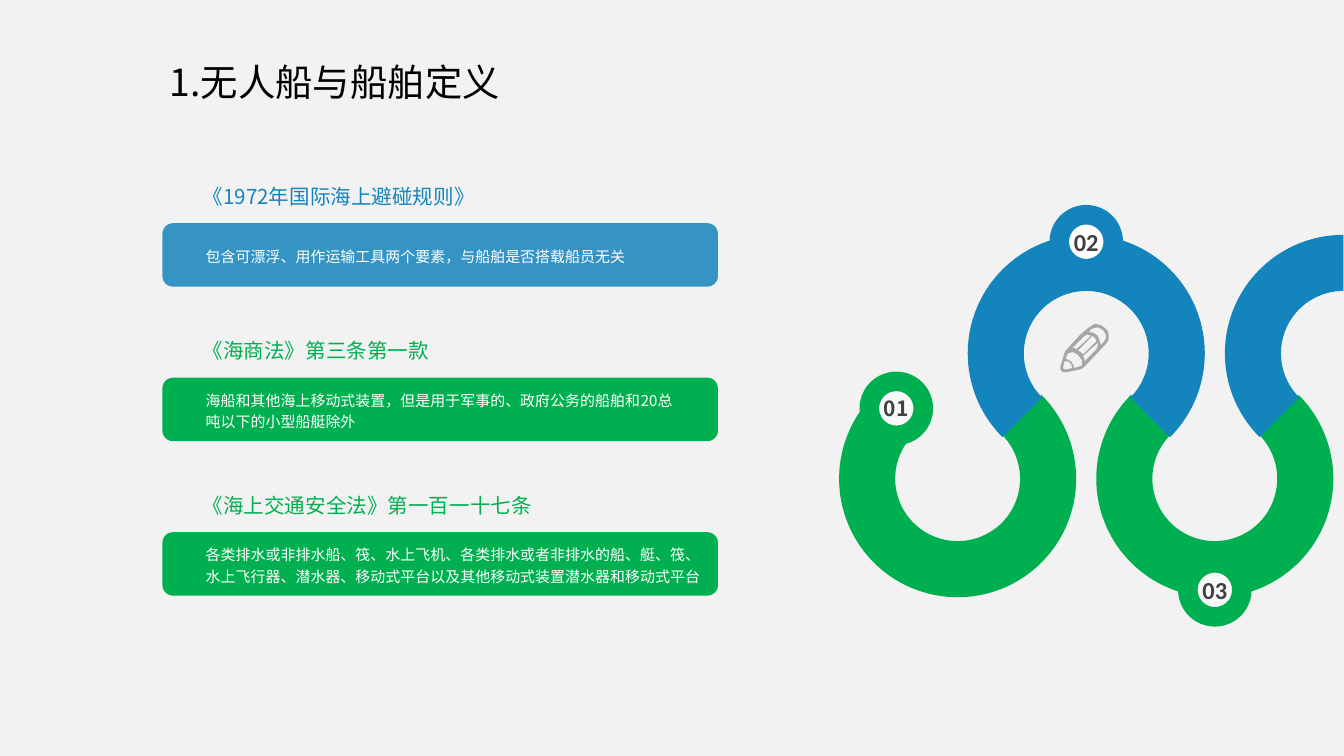
import math

import pptx
import pptx.dml.color
import pptx.enum.shapes
import pptx.enum.text
import pptx.oxml
import pptx.oxml.ns
import pptx.util
from pptx.util import Cm

SHAPES = pptx.enum.shapes.MSO_SHAPE
ANCHOR = pptx.enum.text.MSO_ANCHOR
ALIGN = pptx.enum.text.PP_ALIGN
AUTO_SIZE = pptx.enum.text.MSO_AUTO_SIZE

GREEN, BLUE = "00B050", "1484BC"
CHINESE_FONT = "Noto Sans CJK SC"

# Ring chain, in centimetres
OUTER_RADIUS, INNER_RADIUS = 2.24, 1.18
CHAIN_LEFT, CHAIN_STEP = 18.1, 2.43
GREEN_Y, BLUE_Y = 9.05, 6.68

# Pencil contours in hundredths of an inch: outline first, then the openings
PENCIL_UNIT = Cm(0.0254)
PENCIL_CONTOURS = [
    [(33, 3), (30, 1), (26, 0), (24, 1), (21, 3), (15, 8), (4, 20), (3, 22), (0, 32),
     (0, 34), (2, 36), (5, 36), (15, 34), (17, 33), (34, 15), (36, 12), (36, 8), (35, 5)],
    [(18, 27), (17, 24), (28, 14), (28, 16), (27, 19), (18, 28)],
    [(17, 23), (15, 21), (13, 20), (24, 9), (26, 11), (27, 13)],
    [(12, 19), (10, 18), (8, 19), (17, 10), (20, 8), (23, 9)],
    [(5, 34), (3, 34), (2, 33), (3, 28), (6, 28), (8, 30), (9, 33)],
    [(10, 33), (10, 31), (8, 28), (6, 27), (4, 26), (5, 23), (6, 22), (9, 21),
     (13, 23), (16, 27), (16, 31), (14, 32)],
    [(32, 14), (30, 16), (30, 15), (29, 12), (28, 9), (25, 7), (21, 6), (23, 4),
     (26, 3), (29, 3), (32, 5), (34, 8), (34, 11)],
]


def color(hex_string):
    return pptx.dml.color.RGBColor.from_string(hex_string)


def paint(shape, fill):
    shape.shadow.inherit = False
    shape.fill.solid()
    shape.fill.fore_color.rgb = color(fill)
    shape.line.fill.background()


def set_opacity(shape, percent):
    fill_color = shape.fill._xPr.find(".//" + pptx.oxml.ns.qn("a:srgbClr"))
    alpha = pptx.oxml.parse_xml(
        f'<a:alpha {pptx.oxml.ns.nsdecls("a")} val="{percent * 1000}"/>')
    fill_color.append(alpha)


def write(shape, text, size, text_color, font=CHINESE_FONT, bold=False,
          alignment=ALIGN.LEFT, line_spacing=None):
    paragraph = shape.text_frame.paragraphs[0]
    paragraph.alignment = alignment
    paragraph.line_spacing = line_spacing
    run = paragraph.add_run()
    run.text = text
    run.font.size = pptx.util.Pt(size)
    run.font.bold = bold
    run.font.color.rgb = color(text_color)
    run.font.name = font
    east_asian = pptx.oxml.parse_xml(
        f'<a:ea {pptx.oxml.ns.nsdecls("a")} typeface="{font}"/>')
    run.font._element.find(pptx.oxml.ns.qn("a:latin")).addnext(east_asian)


def set_frame(shape, left, top, right, bottom, wrap=True):
    frame = shape.text_frame
    frame.margin_left, frame.margin_top = Cm(left), Cm(top)
    frame.margin_right, frame.margin_bottom = Cm(right), Cm(bottom)
    frame.vertical_anchor = ANCHOR.MIDDLE
    frame.word_wrap = wrap


def add_title(slide, text):
    title = slide.shapes.title
    title.left, title.top, title.width, title.height = Cm(2.95), Cm(1), Cm(12.7), Cm(1.12)
    title.text_frame.vertical_anchor = ANCHOR.TOP
    title.text_frame.auto_size = AUTO_SIZE.SHAPE_TO_FIT_TEXT
    write(title, text, 20, "000000")


def add_ring(slide, center_x, center_y, start, end, fill):
    """Ring that runs clockwise from start to end, in degrees."""
    size = 2 * OUTER_RADIUS
    ring = slide.shapes.add_shape(
        SHAPES.BLOCK_ARC, Cm(center_x - OUTER_RADIUS), Cm(center_y - OUTER_RADIUS),
        Cm(size), Cm(size))
    ring.adjustments[0] = start * 0.6
    ring.adjustments[1] = end * 0.6
    ring.adjustments[2] = (OUTER_RADIUS - INNER_RADIUS) / size
    paint(ring, fill)


def add_cut_ring(slide, center_x, center_y, start, end, fill):
    """Part of a ring that stops at the slide edge."""
    def arc(radius, angles):
        return [(Cm(center_x + radius * math.cos(math.radians(angle))),
                 Cm(center_y + radius * math.sin(math.radians(angle)))) for angle in angles]

    angles = range(start, end + 1, 3)
    points = arc(OUTER_RADIUS, angles) + arc(INNER_RADIUS, reversed(angles))
    builder = slide.shapes.build_freeform(*points[0])
    builder.add_line_segments(points[1:], close=True)
    paint(builder.convert_to_shape(), fill)


def add_badge(slide, center_x, center_y, number, fill, border, font, size):
    diameter = 1.02
    badge = slide.shapes.add_shape(
        SHAPES.OVAL, Cm(center_x - diameter / 2), Cm(center_y - diameter / 2),
        Cm(diameter), Cm(diameter))
    paint(badge, fill)
    badge.line.color.rgb = color(border)
    badge.line.width = pptx.util.Pt(10.5)
    set_frame(badge, 0, 0, 0, 0, wrap=False)
    write(badge, number, size, "404040", font, bold=True, alignment=ALIGN.CENTER)


def add_pencil(slide, left, top):
    outline, *openings = PENCIL_CONTOURS
    builder = slide.shapes.build_freeform(*outline[0], scale=float(PENCIL_UNIT))
    builder.add_line_segments(outline[1:], close=True)
    for opening in openings:
        builder.move_to(*opening[0])
        builder.add_line_segments(opening[1:], close=True)
    paint(builder.convert_to_shape(Cm(left), Cm(top)), "A6A6A6")


def add_definition(slide, top, heading, body, fill, opacity, right_margin):
    left, width = 3.07, 10.5
    card = slide.shapes.add_shape(
        SHAPES.ROUNDED_RECTANGLE, Cm(left), Cm(top), Cm(width), Cm(1.2))
    paint(card, fill)
    if opacity < 100:
        set_opacity(card, opacity)
    set_frame(card, 0.76, 0.1, right_margin, 0.1)
    write(card, body, 8, "FFFFFF", line_spacing=1.2)

    # The heading is as wide as its card, so it stays on one line
    label = slide.shapes.add_textbox(Cm(left), Cm(top - 0.83), Cm(width), Cm(0.64))
    set_frame(label, 0.76, 0, 0, 0)
    write(label, heading, 11, fill)


def main():
    presentation = pptx.Presentation()
    presentation.slide_width, presentation.slide_height = Cm(25.4), Cm(14.29)
    slide = presentation.slides.add_slide(presentation.slide_layouts[5])
    slide.background.fill.solid()
    slide.background.fill.fore_color.rgb = color("F2F2F2")
    add_title(slide, "1.无人船与船舶定义")

    # Ring chain: green rings open upwards, blue rings open downwards
    first, second, third, fourth = [CHAIN_LEFT + CHAIN_STEP * index for index in range(4)]
    add_ring(slide, first, GREEN_Y, 315, 225, GREEN)
    add_ring(slide, third, GREEN_Y, 315, 225, GREEN)
    add_ring(slide, second, BLUE_Y, 135, 45, BLUE)
    add_cut_ring(slide, fourth, BLUE_Y, 135, 270, BLUE)

    # Numbers and icon
    add_badge(slide, 16.94, 7.72, "01", "F9F9F9", GREEN, CHINESE_FONT, 11.2)
    add_badge(slide, second, 4.57, "02", "FFFFFF", BLUE, "Calibri", 13.1)
    add_badge(slide, third, 11.15, "03", "F9F9F9", GREEN, "Calibri", 13.1)
    add_pencil(slide, 20.04, 6.12)

    # Definitions
    definitions = [
        ("《1972年国际海上避碰规则》",
         "包含可漂浮、用作运输工具两个要素，与船舶是否搭载船员无关", BLUE, 85, 0.18),
        ("《海商法》第三条第一款",
         "海船和其他海上移动式装置，但是用于军事的、政府公务的船舶和20总吨以下的小型船艇除外",
         GREEN, 100, 0.76),
        ("《海上交通安全法》第一百一十七条",
         "各类排水或非排水船、筏、水上飞机、各类排水或者非排水的船、艇、筏、"
         "水上飞行器、潜水器、移动式平台以及其他移动式装置潜水器和移动式平台",
         GREEN, 100, 0.18),
    ]
    for index, definition in enumerate(definitions):
        add_definition(slide, 4.22 + 2.92 * index, *definition)

    presentation.save("out.pptx")


if __name__ == "__main__":
    main()
